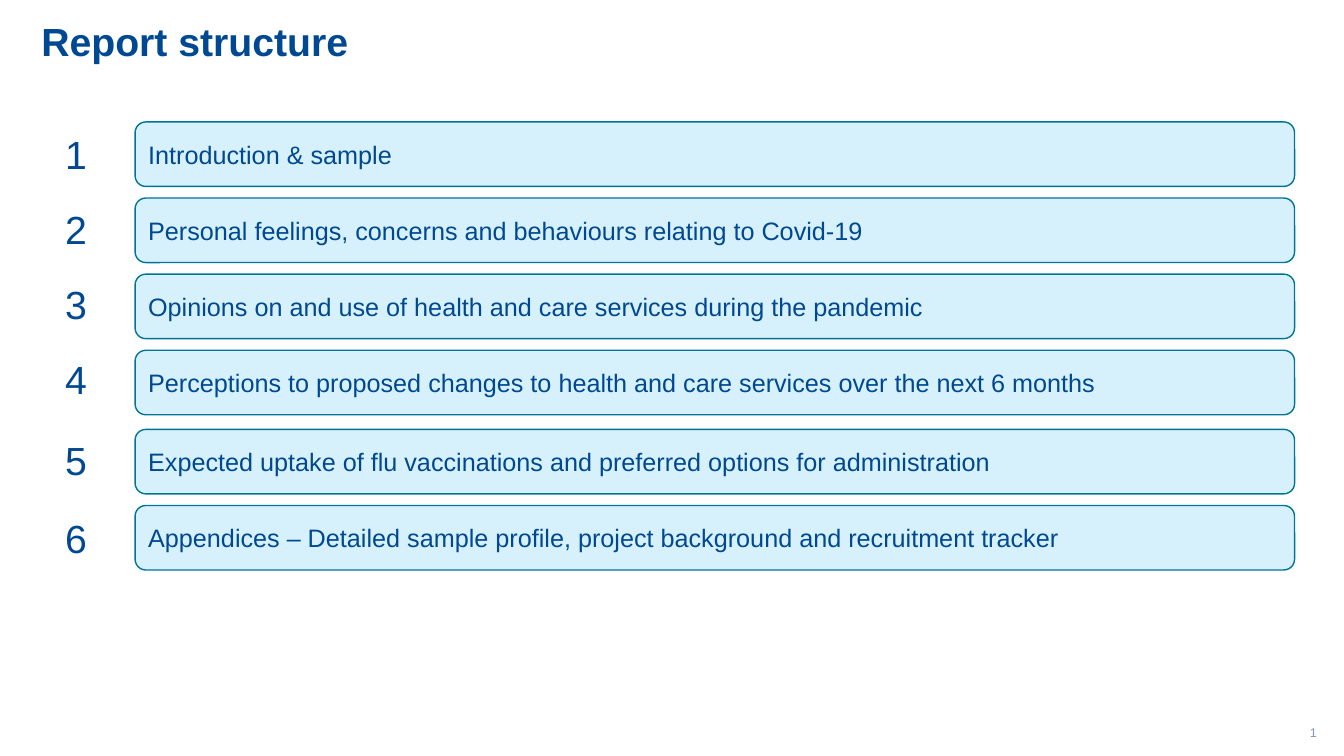
from pptx import Presentation
from pptx.dml.color import RGBColor
from pptx.enum.shapes import MSO_SHAPE
from pptx.enum.text import MSO_ANCHOR, PP_ALIGN
from pptx.util import Inches, Pt

ROUND = MSO_SHAPE.ROUNDED_RECTANGLE
TOP, MIDDLE = MSO_ANCHOR.TOP, MSO_ANCHOR.MIDDLE
LEFT, CENTER, RIGHT = PP_ALIGN.LEFT, PP_ALIGN.CENTER, PP_ALIGN.RIGHT

WIDE, HIGH = 13.33, 7.5
NAVY, TEAL, PALE, GREY = "004992", "007497", "D6F1FB", "8C95B6"

TITLE = "Report structure"
PAGE = "1"
GROUPS = [
    {"bar": 1.21, "num": 1.24, "step": 0.745, "items": [
        "Introduction & sample",
        "Personal feelings, concerns and behaviours relating to Covid-19",
        "Opinions on and use of health and care services during the pandemic",
        "Perceptions to proposed changes to health and care services over the next 6 months",
    ]},
    {"bar": 4.26, "num": 4.28, "step": 0.77, "items": [
        "Expected uptake of flu vaccinations and preferred options for administration",
        "Appendices – Detailed sample profile, project background and recruitment tracker",
    ]},
]
PITCH = 0.755
NUM_X, NUM_W, NUM_H = 0.32, 0.87, 0.57
BAR_X, BAR_W, BAR_H = 1.34, 11.5, 0.64


def color(code):
    return RGBColor.from_string(code)


def write(shape, text, size=18, ink=NAVY, bold=False, align=LEFT,
          anchor=TOP, side=0.1, space=1.0):
    frame = shape.text_frame
    frame.word_wrap = True
    frame.vertical_anchor = anchor
    frame.margin_left = frame.margin_right = Inches(side)
    para = frame.paragraphs[0]
    para.alignment = align
    para.line_spacing = space
    run = para.add_run()
    run.text = text
    run.font.name = "Arial"
    run.font.size = Pt(size)
    run.font.bold = bold
    run.font.color.rgb = color(ink)


def place(*box):
    return [Inches(side) for side in box]


def add_bar(slide, top, text):
    bar = slide.shapes.add_shape(ROUND, *place(BAR_X, top, BAR_W, BAR_H))
    bar.shadow.inherit = False
    bar.fill.solid()
    bar.fill.fore_color.rgb = color(PALE)
    bar.line.color.rgb = color(TEAL)
    bar.line.width = Pt(1)
    write(bar, text, anchor=MIDDLE)


def main():
    deck = Presentation()
    deck.slide_width, deck.slide_height = place(WIDE, HIGH)
    slide = deck.slides.add_slide(deck.slide_layouts[6])

    def add_text(box, text, **style):
        write(slide.shapes.add_textbox(*place(*box)), text, **style)

    add_text((0.17, 0.18, 12.84, 1.13), TITLE, size=28, bold=True,
             side=0.24, space=0.9)
    count = 0
    for group in GROUPS:
        for row, item in enumerate(group["items"]):
            count += 1
            top = group["num"] + row * group["step"]
            add_text((NUM_X, top, NUM_W, NUM_H), str(count), size=28, align=CENTER)
            add_bar(slide, group["bar"] + row * PITCH, item)
    add_text((10.16, 7.07, 3, 0.4), PAGE, size=9, ink=GREY,
             align=RIGHT, anchor=MIDDLE)
    deck.save("out.pptx")


if __name__ == "__main__":
    main()
